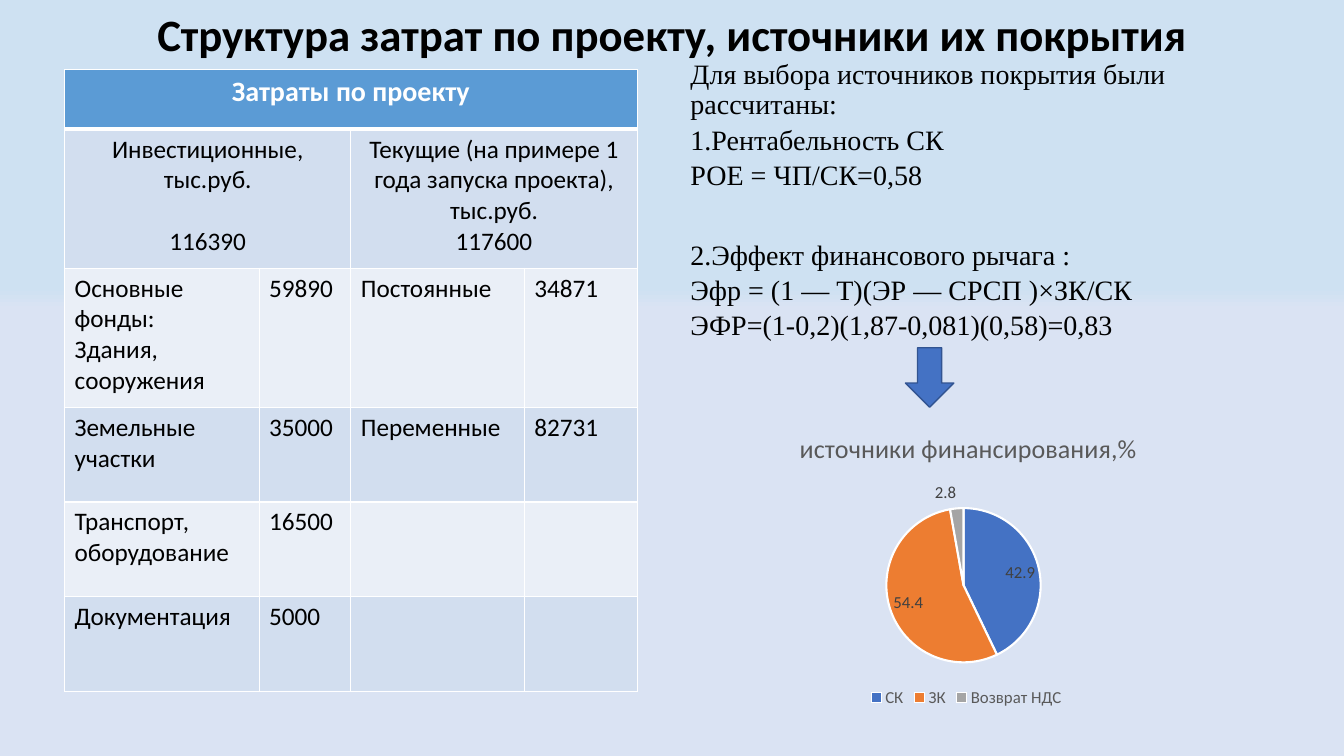
from dataclasses import dataclass
from lxml import etree
from pptx import Presentation
from pptx.chart.data import CategoryChartData
from pptx.dml.color import RGBColor
from pptx.enum.chart import XL_CHART_TYPE as ChartType, XL_LABEL_POSITION as LabelPosition
from pptx.enum.chart import XL_LEGEND_POSITION as LegendPosition
from pptx.enum.shapes import MSO_SHAPE as Preset
from pptx.enum.text import MSO_ANCHOR as Anchor, PP_ALIGN as Align
from pptx.oxml import parse_xml
from pptx.oxml.ns import nsdecls, qn
from pptx.util import Inches, Pt

TITLE = "Структура затрат по проекту, источники их покрытия"
COST_HEADER = "Затраты по проекту"
COST_GROUPS = [
    ("Инвестиционные, тыс.руб.", "116390", 22),
    ("Текущие (на примере 1 года запуска проекта), тыс.руб.", "117600", 0),
]
COST_ITEMS = [
    ("Основные фонды:\nЗдания,\nсооружения", "59890", "Постоянные", "34871"),
    ("Земельные участки", "35000", "Переменные", "82731"),
    ("Транспорт, оборудование", "16500", "", ""),
    ("Документация", "5000", "", ""),
]
CALCULATIONS = [
    ("Для выбора источников покрытия были рассчитаны:", 0.9, 0),
    ("1.Рентабельность СК", 1, 1),
    ("РОЕ = ЧП/СК=0,58", 1, 1),
    ("2.Эффект финансового рычага :", 1, 33),
    ("Эфр = (1 — T)(ЭР — СРСП )×ЗК/СК", 1, 1),
    ("ЭФР=(1-0,2)(1,87-0,081)(0,58)=0,83", 1, 1),
]
FUNDING_TITLE = "источники финансирования,%"
FUNDING = [("СК", 42.9, "4472C4"), ("ЗК", 54.4, "ED7D31"), ("Возврат НДС", 2.8, "A5A5A5")]


@dataclass(frozen=True)
class Theme:
    sans: str = "Calibri"
    serif: str = "Times New Roman"
    black: str = "000000"
    white: str = "FFFFFF"
    sky: str = "CEE1F2"
    lavender: str = "DAE3F3"
    header: str = "5B9BD5"
    bands: tuple = ("D2DEEF", "EAEFF7")
    arrow: str = "4472C4"
    arrow_line: str = "325491"
    chart_text: str = "595959"
    label_text: str = "404040"
    title_size: int = 32
    body_size: int = 20
    cell_size: int = 18
    chart_title_size: float = 18.6
    chart_size: int = 12


THEME = Theme()
WIDTH, HEIGHT = 13.33, 7.5
COLUMN_WIDTH = 5.67
LEFT, RIGHT = 0.64, 6.75
TITLE_BOX = (0.92, 0.07, 11.5, 0.59)
TABLE_TOP = 0.69
TABLE_COLUMNS = (1.93, 0.91, 1.72, 1.12)
TABLE_ROWS = (0.59, 1.38, 1.38, 0.94, 0.94, 0.94)
CALCULATIONS_BOX = (RIGHT, 0.55, COLUMN_WIDTH, 2.9)
ARROW_BOX = (8.98, 3.45, 0.48, 0.59)
CHART_BOX = (RIGHT, 4.04, COLUMN_WIDTH, 3.02)
PIE_LAYOUT = {"x": 0.36, "y": 0.33, "w": 0.27, "h": 0.51}
CHART_TITLE_LAYOUT = {"x": 0.2, "y": 0.06}


def color(value):
    return RGBColor.from_string(value)


def box(lengths):
    return [Inches(length) for length in lengths]


def set_font(font, size, value, name=THEME.sans, bold=False):
    formats = {"size": Pt(size), "name": name, "bold": bold}
    for attribute, setting in formats.items():
        setattr(font, attribute, setting)
    font.color.rgb = color(value)


def write(frame, lines, size, value=THEME.black, name=THEME.sans, bold=False, align=Align.LEFT):
    frame.word_wrap = True
    for index, (text, spacing, before) in enumerate(lines):
        paragraph = frame.add_paragraph() if index else frame.paragraphs[0]
        formats = {"alignment": align, "line_spacing": spacing, "space_before": Pt(before)}
        for attribute, setting in formats.items():
            setattr(paragraph, attribute, setting)
        run = paragraph.add_run()
        run.text = text
        set_font(run.font, size, value, name, bold)


def paint_cell(cell, fill, bottom=1):
    cell.fill.solid()
    cell.fill.fore_color.rgb = color(fill)
    properties = cell._tc.get_or_add_tcPr()
    for index, (side, width) in enumerate([("L", 1), ("R", 1), ("T", 1), ("B", bottom)]):
        border = parse_xml(
            f'<a:ln{side} {nsdecls("a")} w="{Pt(width)}"><a:solidFill>'
            f'<a:srgbClr val="{THEME.white}"/></a:solidFill></a:ln{side}>'
        )
        properties.insert(index, border)


def add_costs(slide):
    frame = slide.shapes.add_table(
        len(TABLE_ROWS), len(TABLE_COLUMNS),
        *box((LEFT, TABLE_TOP, sum(TABLE_COLUMNS), sum(TABLE_ROWS))),
    )
    table = frame.table
    table.first_row = table.horz_banding = False
    for column, width in zip(table.columns, TABLE_COLUMNS):
        column.width = Inches(width)
    for index, (row, height) in enumerate(zip(table.rows, TABLE_ROWS)):
        row.height = Inches(height)
        for cell in row.cells:
            if index:
                paint_cell(cell, THEME.bands[(index + 1) % 2 if index < 2 else (index - 1) % 2])
            else:
                paint_cell(cell, THEME.header, 3)
    header = table.cell(0, 0)
    header.merge(table.cell(0, 3))
    write(header.text_frame, [(COST_HEADER, 1, 0)], THEME.body_size, THEME.white,
          bold=True, align=Align.CENTER)
    for group, (label, total, gap) in enumerate(COST_GROUPS):
        cell = table.cell(1, group * 2)
        cell.merge(table.cell(1, group * 2 + 1))
        write(cell.text_frame, [(label, 1, 0), (total, 1, gap)], THEME.cell_size,
              align=Align.CENTER)
    for row, item in enumerate(COST_ITEMS, 2):
        for column, text in enumerate(item):
            if text:
                lines = [(line, 1, 0) for line in text.split("\n")]
                write(table.cell(row, column).text_frame, lines, THEME.cell_size)


def place(element, shares, inner=False):
    layout = element.find(qn("c:layout"))
    if layout is None:
        layout = parse_xml(f'<c:layout {nsdecls("c")}/>')
        text = element.find(qn("c:tx"))
        element.insert(0 if text is None else 1, layout)
    for child in list(layout):
        layout.remove(child)
    manual = etree.SubElement(layout, qn("c:manualLayout"))
    settings = [("layoutTarget", "inner")] if inner else []
    settings += [("xMode", "edge"), ("yMode", "edge"), *shares.items()]
    for tag, value in settings:
        etree.SubElement(manual, qn(f"c:{tag}")).set("val", str(value))


def add_funding(slide):
    data = CategoryChartData()
    data.categories = [name for name, _, _ in FUNDING]
    data.add_series(FUNDING_TITLE, [share for _, share, _ in FUNDING])
    chart = slide.shapes.add_chart(ChartType.PIE, *box(CHART_BOX), data).chart
    set_font(chart.font, THEME.chart_size, THEME.chart_text)
    chart.has_title = True
    write(chart.chart_title.text_frame, [(FUNDING_TITLE, 1, 0)], THEME.chart_title_size,
          THEME.chart_text, align=Align.CENTER)
    place(chart.chart_title._element, CHART_TITLE_LAYOUT)
    place(chart._chartSpace.chart.plotArea, PIE_LAYOUT, True)
    chart.has_legend = True
    chart.legend.position = LegendPosition.BOTTOM
    chart.legend.include_in_layout = False
    set_font(chart.legend.font, THEME.chart_size, THEME.chart_text)
    plot = chart.plots[0]
    plot.vary_by_categories = True
    plot.has_data_labels = True
    labels = plot.data_labels
    labels.show_value = True
    labels.show_percentage = False
    labels.position = LabelPosition.BEST_FIT
    set_font(labels.font, THEME.chart_size, THEME.label_text)
    for index, (_, _, fill) in enumerate(FUNDING):
        style = plot.series[0].points[index].format
        style.fill.solid()
        style.fill.fore_color.rgb = color(fill)
        style.line.color.rgb = color(THEME.white)
        style.line.width = Pt(1.5)


def add_background(slide):
    fill = slide.background.fill
    fill.gradient()
    fill.gradient_angle = 270
    stops = ((0.38, THEME.sky), (0.41, THEME.lavender))
    for stop, (position, value) in zip(fill.gradient_stops, stops):
        stop.position = position
        stop.color.rgb = color(value)


def add_arrow(slide):
    arrow = slide.shapes.add_shape(Preset.DOWN_ARROW, *box(ARROW_BOX))
    arrow.shadow.inherit = False
    arrow.fill.solid()
    arrow.fill.fore_color.rgb = color(THEME.arrow)
    arrow.line.color.rgb = color(THEME.arrow_line)
    arrow.line.width = Pt(1)


def main():
    presentation = Presentation()
    presentation.slide_width, presentation.slide_height = box((WIDTH, HEIGHT))
    slide = presentation.slides.add_slide(presentation.slide_layouts[6])
    add_background(slide)
    title = slide.shapes.add_textbox(*box(TITLE_BOX)).text_frame
    title.vertical_anchor = Anchor.MIDDLE
    write(title, [(TITLE, 0.9, 0)], THEME.title_size, bold=True, align=Align.CENTER)
    add_costs(slide)
    calculations = slide.shapes.add_textbox(*box(CALCULATIONS_BOX)).text_frame
    write(calculations, CALCULATIONS, THEME.body_size, name=THEME.serif)
    add_arrow(slide)
    add_funding(slide)
    presentation.save("out.pptx")


if __name__ == "__main__":
    main()
